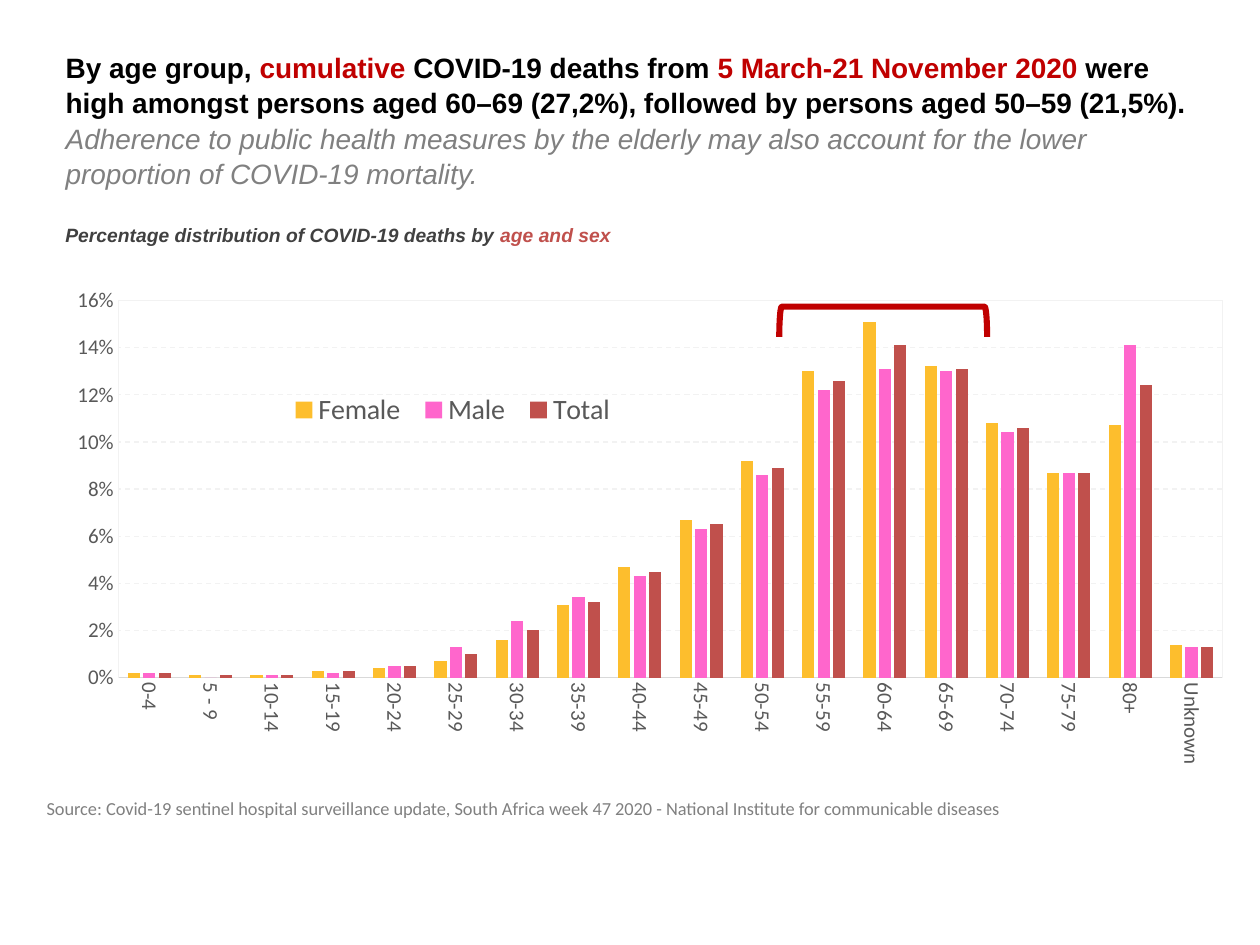
"""Builds a slide on COVID-19 deaths by age group and sex."""
import lxml.etree
import pptx
import pptx.chart.data
import pptx.dml.color
import pptx.enum.chart
import pptx.enum.dml
import pptx.enum.shapes
import pptx.enum.text
import pptx.oxml
import pptx.oxml.ns
import pptx.util

Cm, Pt = pptx.util.Cm, pptx.util.Pt
RGBColor = pptx.dml.color.RGBColor
qn = pptx.oxml.ns.qn

BLACK = RGBColor(0x00, 0x00, 0x00)
DARK = RGBColor(0x40, 0x40, 0x40)
SLATE = RGBColor(0x59, 0x59, 0x59)
GREY = RGBColor(0x80, 0x80, 0x80)
SILVER = RGBColor(0xD9, 0xD9, 0xD9)
PALE = RGBColor(0xF2, 0xF2, 0xF2)
RED = RGBColor(0xC0, 0x00, 0x00)
BRICK = RGBColor(0xC0, 0x50, 0x4C)
AMBER = RGBColor(0xFD, 0xBE, 0x2D)
PINK = RGBColor(0xFF, 0x66, 0xCC)

AGES = [
    "0-4", "5 - 9", "10-14", "15-19", "20-24", "25-29", "30-34", "35-39", "40-44",
    "45-49", "50-54", "55-59", "60-64", "65-69", "70-74", "75-79", "80+", "Unknown",
]
DEATHS = [
    ("Female", AMBER, [0.2, 0.1, 0.1, 0.3, 0.4, 0.7, 1.6, 3.1, 4.7, 6.7, 9.2, 13,
                       15.1, 13.2, 10.8, 8.7, 10.7, 1.4]),
    ("Male", PINK, [0.2, 0, 0.1, 0.2, 0.5, 1.3, 2.4, 3.4, 4.3, 6.3, 8.6, 12.2,
                    13.1, 13, 10.4, 8.7, 14.1, 1.3]),
    ("Total", BRICK, [0.2, 0.1, 0.1, 0.3, 0.5, 1, 2, 3.2, 4.5, 6.5, 8.9, 12.6,
                      14.1, 13.1, 10.6, 8.7, 12.4, 1.3]),
]


class Deck:
    """Holds the style and the current slide."""

    heading_font = "Arial"
    body_font = "Calibri"

    def __init__(self):
        self.prs = pptx.Presentation()
        self.prs.slide_width, self.prs.slide_height = Cm(25.4), Cm(19.05)
        self.s = self.prs.slides.add_slide(self.prs.slide_layouts[5])

    def font(self, font, name, size, color, bold=False, italic=False):
        """Sets the look of a font."""
        font.name, font.size = name, Pt(size)
        font.bold, font.italic = bold, italic
        font.color.rgb = color

    def fill_text(self, sp, name, size, runs):
        """Fills a shape with one paragraph of (text, color, bold, italic) runs."""
        tf = sp.text_frame
        tf.word_wrap = True
        tf.auto_size = pptx.enum.text.MSO_AUTO_SIZE.NONE
        tf.vertical_anchor = pptx.enum.text.MSO_ANCHOR.TOP
        p = tf.paragraphs[0]
        p.alignment = pptx.enum.text.PP_ALIGN.LEFT
        for text, color, bold, italic in runs:
            r = p.add_run()
            r.text = text
            self.font(r.font, name, size, color, bold, italic)
        return p

    def title(self, x, y, w, h, size, runs):
        """Places and fills the title."""
        sp = self.s.shapes.title
        sp.left, sp.top, sp.width, sp.height = Cm(x), Cm(y), Cm(w), Cm(h)
        self.fill_text(sp, self.heading_font, size, runs).line_spacing = 1.05

    def text(self, x, y, w, h, name, size, runs):
        """Adds a text box."""
        sp = self.s.shapes.add_textbox(Cm(x), Cm(y), Cm(w), Cm(h))
        self.fill_text(sp, name, size, runs)

    def layout(self, target, x, y, w, h):
        """Makes a manual chart layout from fractions of the chart size."""
        layout = lxml.etree.Element(qn("c:layout"))
        manual = lxml.etree.SubElement(layout, qn("c:manualLayout"))
        parts = [("xMode", "edge"), ("yMode", "edge"), ("x", x), ("y", y), ("w", w), ("h", h)]
        if target:
            parts.insert(0, ("layoutTarget", target))
        for tag, val in parts:
            lxml.etree.SubElement(manual, qn("c:" + tag)).set("val", str(val))
        return layout

    def column_chart(self, x, y, w, h, categories, series):
        """Adds a clustered column chart."""
        data = pptx.chart.data.CategoryChartData()
        data.categories = categories
        for name, color, values in series:
            data.add_series(name, values)
        kind = pptx.enum.chart.XL_CHART_TYPE.COLUMN_CLUSTERED
        chart = self.s.shapes.add_chart(kind, Cm(x), Cm(y), Cm(w), Cm(h), data).chart
        chart.has_title = False
        self.font(chart.font, self.body_font, 10, BLACK)
        plot = chart.plots[0]
        plot.gap_width, plot.overlap, plot.vary_by_categories = 150, -27, False
        for ser, (name, color, values) in zip(plot.series, series):
            ser.format.fill.solid()
            ser.format.fill.fore_color.rgb = color
            ser.invert_if_negative = False
        self.axes(chart)
        self.legend(chart)
        self.plot_area(chart)

    def axes(self, chart):
        """Formats both axes."""
        cat, val = chart.category_axis, chart.value_axis
        for axis in (cat, val):
            axis.major_tick_mark = axis.minor_tick_mark = pptx.enum.chart.XL_TICK_MARK.NONE
            self.font(axis.tick_labels.font, self.body_font, 12, SLATE)
        cat.format.line.color.rgb = SILVER
        cat.format.line.width = Pt(0.75)
        cat._element.find(qn("c:txPr")).find(qn("a:bodyPr")).set("rot", "5400000")
        val.minimum_scale, val.maximum_scale, val.major_unit = 0, 16, 2
        val.tick_labels.number_format = "0\\%"
        val.tick_labels.number_format_is_linked = False
        val.format.line.fill.background()
        line = val.major_gridlines.format.line
        line.color.rgb, line.width = PALE, Pt(0.75)
        line.dash_style = pptx.enum.dml.MSO_LINE.DASH

    def legend(self, chart):
        """Lays the legend over the empty part of the plot."""
        chart.has_legend = True
        legend = chart.legend
        legend.position = pptx.enum.chart.XL_LEGEND_POSITION.BOTTOM
        legend.include_in_layout = False
        self.font(legend.font, self.body_font, 16, SLATE)
        el = legend._element
        for old in el.findall(qn("c:layout")):
            el.remove(old)
        el.find(qn("c:legendPos")).addnext(self.layout(None, 0.19, 0.2, 0.29, 0.08))

    def plot_area(self, chart):
        """Places and outlines the plot area."""
        area = chart._chartSpace.chart.plotArea
        for old in area.findall(qn("c:layout")):
            area.remove(old)
        area.insert(0, self.layout("inner", 0.055, 0.042, 0.925, 0.682))
        area.append(pptx.oxml.parse_xml(
            f'<c:spPr {pptx.oxml.ns.nsdecls("c", "a")}><a:noFill/><a:ln w="9525">'
            f'<a:solidFill><a:srgbClr val="{PALE}"/></a:solidFill></a:ln></c:spPr>'))

    def bracket(self, x, y, w, h, color, width):
        """Adds a right bracket turned to open downwards."""
        kind = pptx.enum.shapes.MSO_SHAPE.RIGHT_BRACKET
        sp = self.s.shapes.add_shape(kind, Cm(x), Cm(y), Cm(w), Cm(h))
        sp.rotation = 270
        sp.shadow.inherit = False
        sp.fill.background()
        sp.line.color.rgb, sp.line.width = color, Pt(width)


def main():
    """Builds and saves the slide."""
    deck = Deck()
    deck.title(1.07, 0.86, 23.67, 3, 16, [
        ("By age group, ", BLACK, True, False),
        ("cumulative ", RED, True, False),
        ("COVID-19 deaths from ", BLACK, True, False),
        ("5 March-21 November 2020 ", RED, True, False),
        ("were high amongst persons aged 60–69 (27,2%), followed by persons aged "
         "50–59 (21,5%). ", BLACK, True, False),
        ("Adherence to public health measures by the elderly may also account for "
         "the lower proportion of COVID-19 mortality.", GREY, False, True),
    ])
    deck.text(1.07, 4.37, 17.7, 0.74, deck.heading_font, 11, [
        ("Percentage distribution of COVID-19 deaths by ", DARK, True, True),
        ("age and sex", BRICK, True, True),
    ])
    deck.text(0.69, 15.95, 23.65, 0.74, deck.body_font, 10.5, [
        ("Source: Covid-19 sentinel hospital surveillance update, South Africa week 47 "
         "2020 - National Institute for communicable diseases", GREY, False, False),
    ])
    deck.column_chart(1.07, 5.59, 24.05, 11.15, AGES, DEATHS)
    deck.bracket(17.5, 4.39, 0.61, 4.19, RED, 3.5)
    deck.prs.save("out.pptx")


if __name__ == "__main__":
    main()
